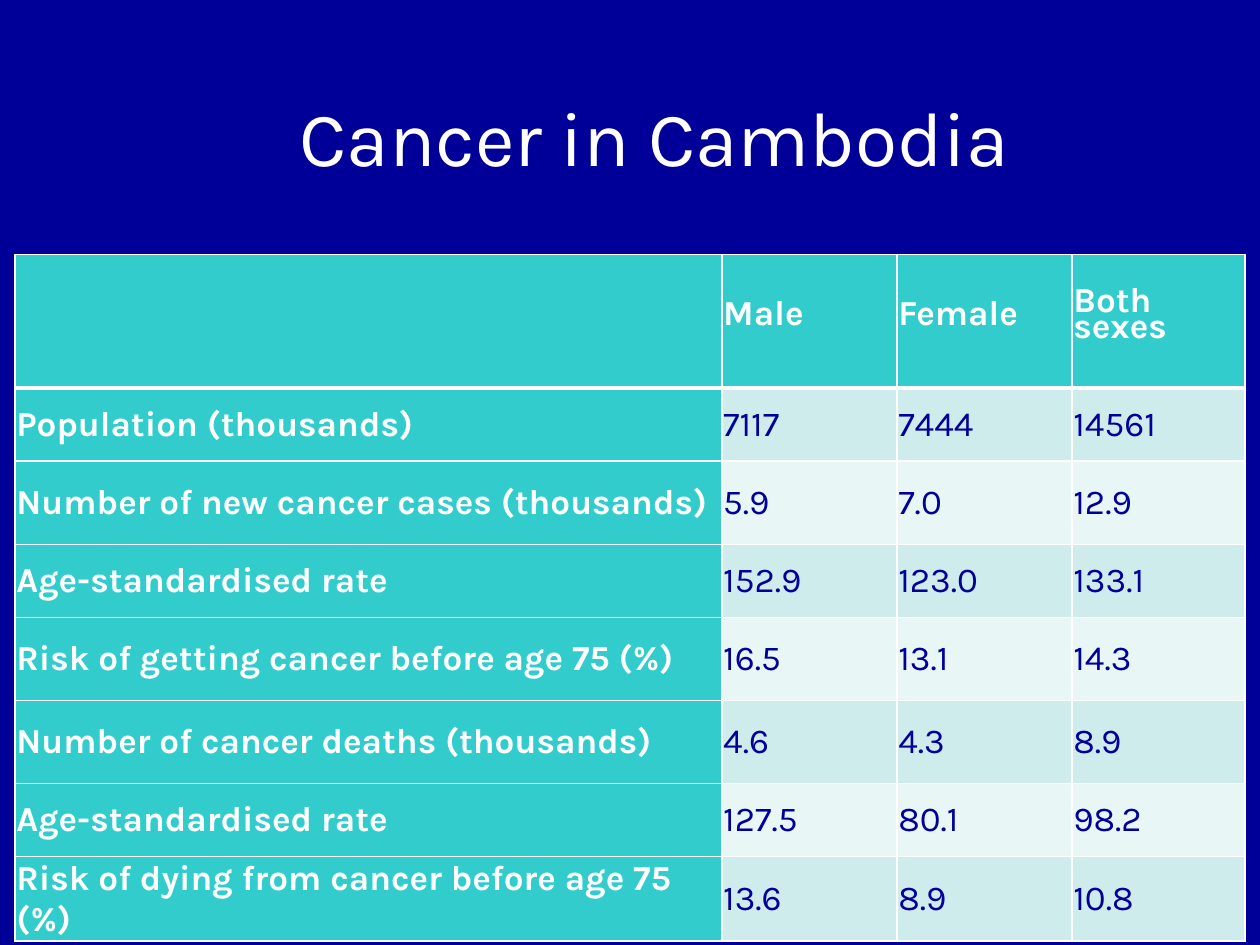
from lxml import etree
from pptx import Presentation
from pptx.dml.color import RGBColor
from pptx.enum.text import MSO_ANCHOR, PP_ALIGN
from pptx.oxml.ns import qn
from pptx.util import Inches, Pt

MIDDLE = MSO_ANCHOR.MIDDLE
LEFT, CENTER, JUSTIFY = PP_ALIGN.LEFT, PP_ALIGN.CENTER, PP_ALIGN.JUSTIFY
FONT = "Karla"
WIDE, HIGH = 10, 7.5
INK = {"navy": "000099", "text": "010199", "white": "FFFFFF",
       "teal": "33CCCC", "mint": "CEECEC", "pale": "E8F6F6"}
COLS = [5.61, 1.39, 1.39, 1.37]
HEAD, LOW, TALL = 1.06, 0.58, 0.66
ROWS = [HEAD, LOW, TALL, LOW, TALL, TALL, LOW, TALL]
DATA = [
    ["", "Male", "Female", "Both sexes"],
    ["Population (thousands)", "7117", "7444", "14561"],
    ["Number of new cancer cases (thousands)", "5.9", "7.0", "12.9"],
    ["Age-standardised rate", "152.9", "123.0", "133.1"],
    ["Risk of getting cancer before age 75 (%)", "16.5", "13.1", "14.3"],
    ["Number of cancer deaths (thousands)", "4.6", "4.3", "8.9"],
    ["Age-standardised rate", "127.5", "80.1", "98.2"],
    ["Risk of dying from cancer before age 75 (%)", "13.6", "8.9", "10.8"],
]


def color(name):
    return RGBColor.from_string(INK[name])


def add_run(para, text, size, ink, bold=False):
    run = para.add_run()
    run.text = text
    font = run.font
    font.name, font.size, font.bold = FONT, Pt(size), bold
    font.color.rgb = color(ink)


def add_title(slide, text):
    box = slide.shapes.title
    box.left, box.top = Inches(0.177 * WIDE), Inches(0.043 * HIGH)
    box.width, box.height = Inches(0.685 * WIDE), Inches(0.201 * HIGH)
    frame = box.text_frame
    frame.word_wrap = True
    frame.vertical_anchor = MIDDLE
    para = frame.paragraphs[0]
    para.alignment = CENTER
    add_run(para, text, 44, "white")


def set_edges(cell, row):
    props = cell._tc.get_or_add_tcPr()
    thick = {"lnB": row == 0, "lnT": row == 1}
    for spot, tag in enumerate(["lnL", "lnR", "lnT", "lnB"]):
        line = etree.Element(qn("a:" + tag), w=str(Pt(3 if thick.get(tag) else 1)))
        fill = etree.SubElement(line, qn("a:solidFill"))
        etree.SubElement(fill, qn("a:srgbClr"), val=INK["white"])
        props.insert(spot, line)


def fill_cell(cell, text, row, col):
    label = row == 0 or col == 0
    cell.fill.solid()
    cell.fill.fore_color.rgb = color("teal" if label else "mint" if row % 2 else "pale")
    set_edges(cell, row)
    cell.vertical_anchor = MIDDLE
    cell.margin_left = cell.margin_right = Inches(0.01)
    cell.margin_top = cell.margin_bottom = Inches(0.01)
    if not text:
        return
    para = cell.text_frame.paragraphs[0]
    para.alignment = JUSTIFY if col else LEFT
    if row == 0:
        para.line_spacing = Pt(15)
    add_run(para, text, 20, "white" if label else "text", label)


def add_grid(slide):
    frame = slide.shapes.add_table(
        len(ROWS), len(COLS), Inches(0.012 * WIDE), Inches(2.02),
        Inches(sum(COLS)), Inches(sum(ROWS)))
    table = frame.table
    for col, width in zip(table.columns, COLS):
        col.width = Inches(width)
    for row, height in zip(table.rows, ROWS):
        row.height = Inches(height)
    for row, texts in enumerate(DATA):
        for col, text in enumerate(texts):
            fill_cell(table.cell(row, col), text, row, col)


def main():
    deck = Presentation()
    deck.slide_width, deck.slide_height = Inches(WIDE), Inches(HIGH)
    slide = deck.slides.add_slide(deck.slide_layouts[5])
    back = slide.background.fill
    back.solid()
    back.fore_color.rgb = color("navy")
    add_title(slide, "Cancer in Cambodia")
    add_grid(slide)
    deck.save("out.pptx")


if __name__ == "__main__":
    main()
